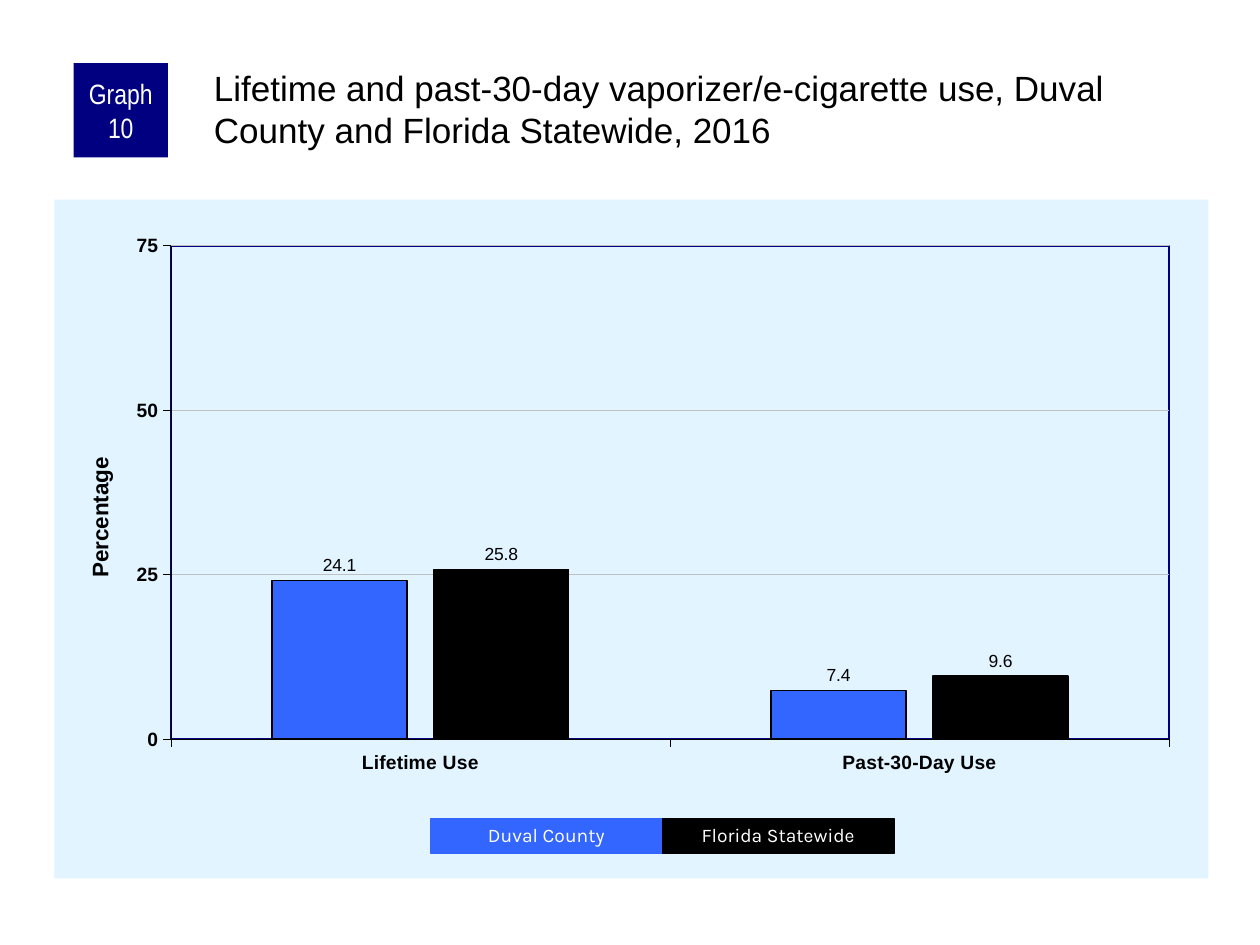
from lxml import etree
from pptx import Presentation
from pptx import util as u
from pptx.chart.data import CategoryChartData
from pptx.dml.color import RGBColor
from pptx.enum import chart as ch, shapes, text
from pptx.oxml import parse_xml
from pptx.oxml.ns import nsdecls, qn

Pt = u.Pt
NAVY = RGBColor(0x00, 0x00, 0x80)
BLUE = RGBColor(0x33, 0x66, 0xFF)
PALE = RGBColor(0xE1, 0xF4, 0xFF)
GREY = RGBColor(0xC0, 0xC0, 0xC0)
BLACK = RGBColor(0, 0, 0)
WHITE = RGBColor(255, 255, 255)

# Content
TITLE = ("Lifetime and past-30-day vaporizer/e-cigarette use, "
         "Duval County and Florida Statewide, 2016")
BADGE = "Graph 10"
AXIS_TITLE = "Percentage"
CATEGORIES = ["Lifetime Use", "Past-30-Day Use"]
SERIES = [  # name, values, colour, outline width
    ("Duval County", (24.1, 7.4), BLUE, 1),
    ("Florida Statewide", (25.8, 9.6), BLACK, 0.75),
]

# Places in points: left, top, width, height
TITLE_BOX = (120, 36, 570, 60)
BADGE_BOX = (42, 36, 54, 54)
CHART_BOX = (31, 114, 659.5, 388)
LEGEND_LEFT, LEGEND_TOP, KEY_W, KEY_H = 246, 468, 132.5, 19.5


def box(values):
    return [Pt(v) for v in values]


def write(tf, words, size, font, color, align=text.PP_ALIGN.CENTER,
          anchor=text.MSO_ANCHOR.MIDDLE, margins=(3.6, 0, 3.6, 0), spacing=1.0):
    tf.word_wrap = True
    tf.auto_size = text.MSO_AUTO_SIZE.NONE
    tf.vertical_anchor = anchor
    (tf.margin_left, tf.margin_top,
     tf.margin_right, tf.margin_bottom) = box(margins)
    p = tf.paragraphs[0]
    p.alignment, p.line_spacing = align, spacing
    r = p.add_run()
    r.text = words
    set_font(r.font, size, color, font=font)


def set_font(f, size, color=BLACK, bold=False, font="Arial"):
    f.size, f.name, f.bold = Pt(size), font, bold
    f.color.rgb = color


def set_line(line, color, width):
    line.color.rgb = color
    line.width = Pt(width)


def add_block(s, place, color, words, size, font, **fmt):
    sp = s.shapes.add_shape(shapes.MSO_SHAPE.RECTANGLE, *box(place))
    sp.shadow.inherit = False
    sp.fill.solid()
    sp.fill.fore_color.rgb = color
    sp.line.fill.background()
    write(sp.text_frame, words, size, font, WHITE, **fmt)
    return sp


def layout_xml(inner=False, **parts):
    target = '<c:layoutTarget val="inner"/>' if inner else ""
    modes = "".join(f'<c:{k}Mode val="edge"/>' for k in "xy")
    values = "".join(f'<c:{k} val="{v}"/>' for k, v in parts.items())
    return parse_xml(f'<c:layout {nsdecls("c")}><c:manualLayout>{target}{modes}'
                     f'{values}</c:manualLayout></c:layout>')


def drop_layout(parent):
    for old in parent.findall(qn("c:layout")):
        parent.remove(old)


def shape_props(fill="<a:noFill/>", line="<a:ln><a:noFill/></a:ln>"):
    return parse_xml(f'<c:spPr {nsdecls("c", "a")}>{fill}{line}</c:spPr>')


def solid(color):
    return f'<a:solidFill><a:srgbClr val="{color}"/></a:solidFill>'


def add_bar_chart(s):
    data = CategoryChartData(number_format="0.0")
    data.categories = CATEGORIES
    for name, values, *_ in SERIES:
        data.add_series(name, values)
    chart = s.shapes.add_chart(ch.XL_CHART_TYPE.COLUMN_CLUSTERED,
                               *box(CHART_BOX), data).chart
    chart.has_title = chart.has_legend = False
    set_font(chart.font, 11.5)

    # Bars and labels
    plot = chart.plots[0]
    plot.gap_width, plot.overlap, plot.vary_by_categories = 150, -20, False
    for ser, (_, _, color, width) in zip(plot.series, SERIES):
        ser.format.fill.solid()
        ser.format.fill.fore_color.rgb = color
        set_line(ser.format.line, BLACK, width)
        labels = ser.data_labels
        labels.show_value = True
        labels.position = ch.XL_LABEL_POSITION.OUTSIDE_END
        labels.number_format, labels.number_format_is_linked = "0.0", False
        set_font(labels.font, 10)

    # Axes
    cat, val = chart.category_axis, chart.value_axis
    for axis in (cat, val):
        axis.major_tick_mark = ch.XL_TICK_MARK.OUTSIDE
        axis.minor_tick_mark = ch.XL_TICK_MARK.NONE
        set_font(axis.tick_labels.font, 11, bold=True)
        set_line(axis.format.line, BLACK, 0.25)
    val.minimum_scale, val.maximum_scale, val.major_unit = 0, 75, 25
    val.tick_labels.number_format = "0"
    val.tick_labels.number_format_is_linked = False
    val.has_major_gridlines = True
    set_line(val.major_gridlines.format.line, GREY, 0.25)
    p = val.axis_title.text_frame.paragraphs[0]
    r = p.add_run()
    r.text = AXIS_TITLE
    set_font(r.font, 12.75, bold=True)
    title = val.axis_title._element
    drop_layout(title)
    title.find(qn("c:tx")).addnext(layout_xml(x=0.024, y=0.374))

    # Plot frame and chart background
    frame = chart._chartSpace.chart.plotArea
    drop_layout(frame)
    frame.insert(0, layout_xml(inner=True, x=0.101, y=0.068, w=0.865, h=0.727))
    frame.append(shape_props(line=f'<a:ln w="{Pt(1)}">{solid(NAVY)}</a:ln>'))
    chart._chartSpace.chart.addnext(shape_props(fill=solid(PALE)))


def main():
    prs = Presentation()
    prs.slide_width, prs.slide_height = Pt(720), Pt(540)
    s = prs.slides.add_slide(prs.slide_layouts[5])

    # Heading
    sp = s.shapes.title
    sp.left, sp.top, sp.width, sp.height = box(TITLE_BOX)
    write(sp.text_frame, TITLE, 20, "Arial", BLACK, align=text.PP_ALIGN.LEFT,
          anchor=text.MSO_ANCHOR.TOP, margins=(2.25, 2.25, 0, 0))
    add_block(s, BADGE_BOX, NAVY, BADGE, 16, "Arial Narrow")

    add_bar_chart(s)

    # Legend keys
    for i, (name, _, color, _) in enumerate(SERIES):
        place = (LEGEND_LEFT + i * KEY_W, LEGEND_TOP, KEY_W, KEY_H)
        sp = add_block(s, place, color, name, 11, "Karla", spacing=0.9)
        set_line(sp.line, color, 0.75)

    prs.save("out.pptx")


if __name__ == "__main__":
    main()
